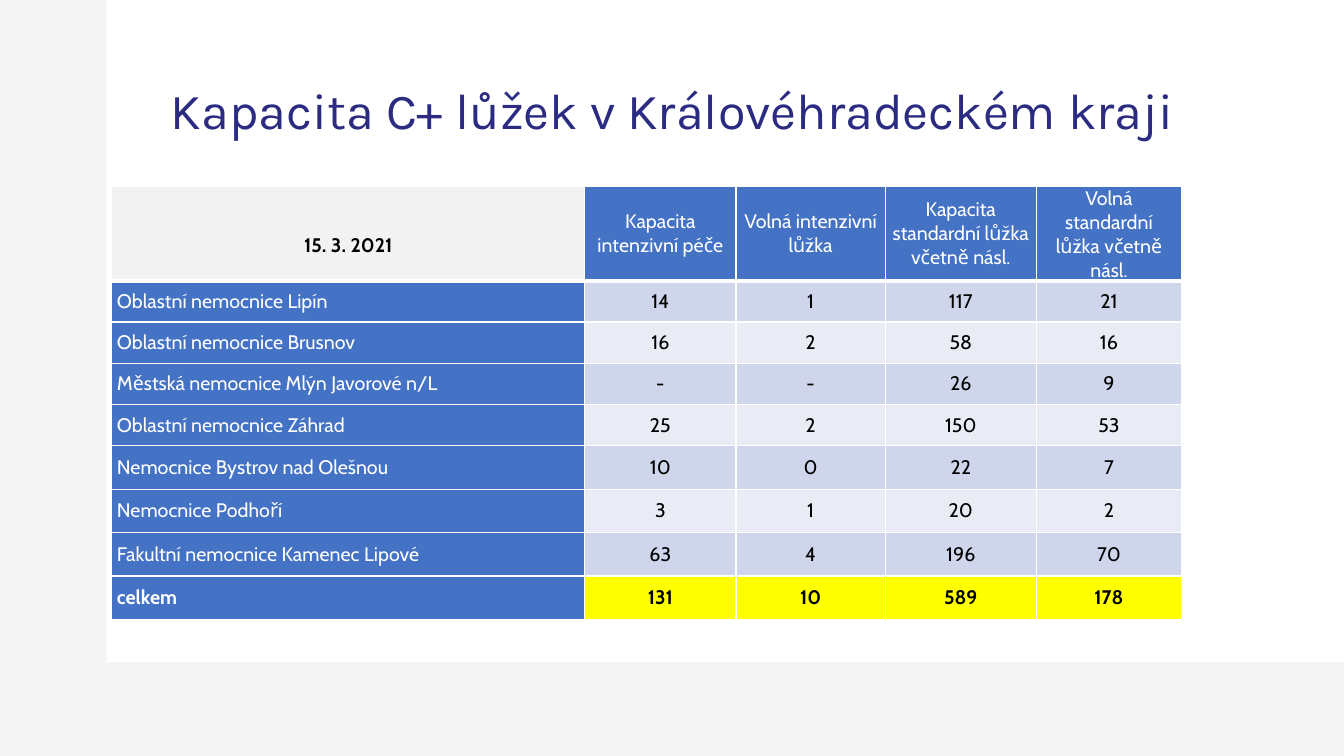
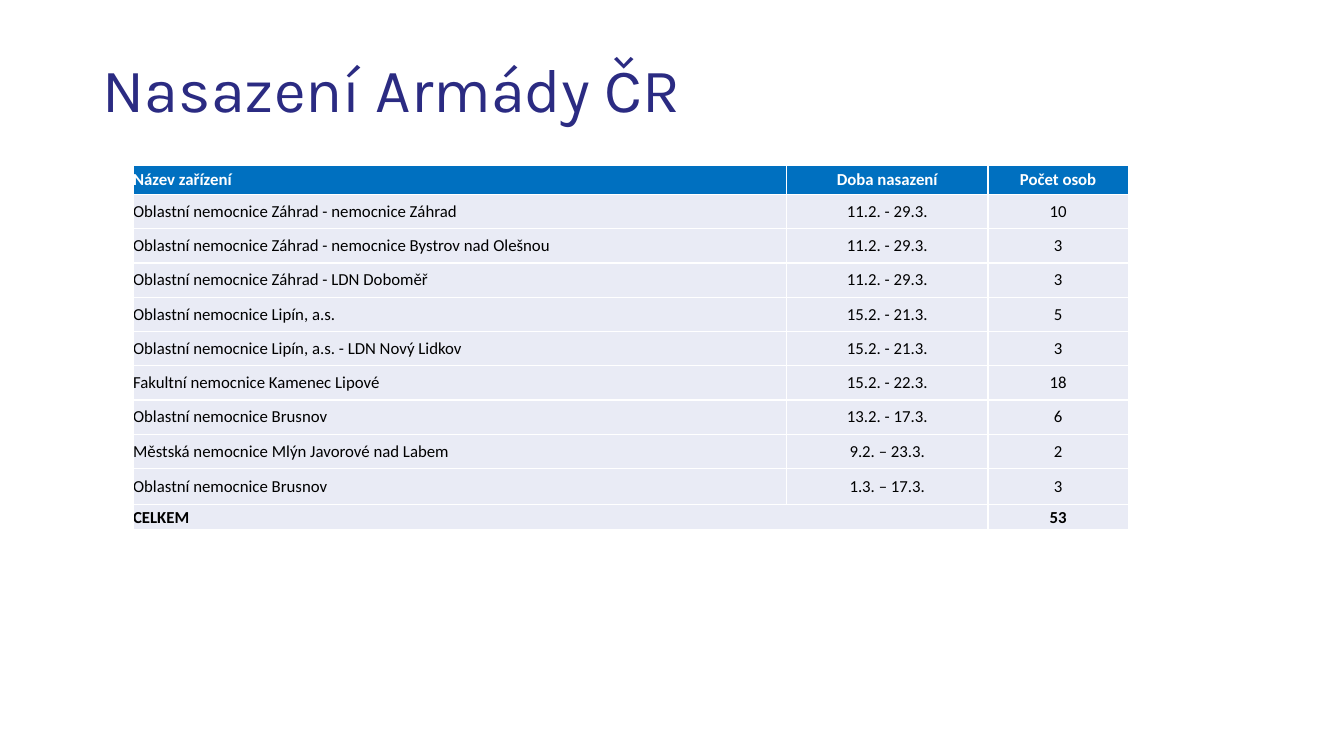
from dataclasses import dataclass

from lxml import etree
from pptx import Presentation
from pptx.dml.color import RGBColor
from pptx.enum import shapes, text
from pptx.oxml import ns
from pptx.util import Inches, Pt


@dataclass(frozen=True)
class Theme:
    title_font: str = "Karla"
    capacity_font: str = "Cabin"
    army_font: str = "Calibri"
    wide_title_size: int = 36
    title_size: int = 44
    capacity_size: int = 14
    army_size: int = 12
    title: str = "2B2B82"
    white: str = "FFFFFF"
    black: str = "000000"
    frame: str = "F4F4F4"
    date: str = "F2F2F2"
    blue: str = "4472C4"
    army_blue: str = "0070C0"
    dark_band: str = "CFD5EA"
    light_band: str = "E9EBF5"
    total: str = "FFFF00"


theme = Theme()


def add_title(slide, words, height, size, alignment):
    box = slide.shapes.add_textbox(Inches(0.92), Inches(0.4), Inches(11.5), Inches(height))
    frame = box.text_frame
    frame.word_wrap = True
    frame.vertical_anchor = text.MSO_ANCHOR.MIDDLE
    paragraph = frame.paragraphs[0]
    paragraph.text = words
    paragraph.alignment = alignment
    paragraph.line_spacing = 0.9
    paragraph.font.name = theme.title_font
    paragraph.font.size = Pt(size)
    paragraph.font.color.rgb = RGBColor.from_string(theme.title)


def add_grid(slide, position, widths, heights, rows, look, font, size, inset, header_rule):
    """Add a white-ruled table; look(row, column) gives fill, text colour and bold.

    None in a row extends the cell to its left. header_rule is in points.
    """
    left, top = position
    table = slide.shapes.add_table(
        len(rows), len(widths), Inches(left), Inches(top),
        Inches(sum(widths)), Inches(sum(heights))).table
    table.first_row = table.horz_banding = False
    for column, width in zip(table.columns, widths):
        column.width = Inches(width)
    for row, height in zip(table.rows, heights):
        row.height = Inches(height)

    for r, row in enumerate(rows):
        for c, words in enumerate(row):
            cell = table.cell(r, c)
            fill, color, bold = look(r, c)
            rules = {"L": 1, "R": 1, "T": header_rule if r == 1 else 1,
                     "B": header_rule if r == 0 else 1}
            properties = cell._tc.get_or_add_tcPr()
            for side, points in rules.items():
                line = etree.SubElement(properties, ns.qn(f"a:ln{side}"), w=str(Pt(points)))
                solid = etree.SubElement(line, ns.qn("a:solidFill"))
                etree.SubElement(solid, ns.qn("a:srgbClr"), val=theme.white)
            cell.fill.solid()
            cell.fill.fore_color.rgb = RGBColor.from_string(fill)
            if words is None:
                table.cell(r, c - 1).merge(cell)
                continue
            cell.vertical_anchor = text.MSO_ANCHOR.MIDDLE
            cell.margin_left = cell.margin_right = Inches(inset)
            cell.margin_top = cell.margin_bottom = 0
            paragraph = cell.text_frame.paragraphs[0]
            paragraph.text = words
            paragraph.alignment = text.PP_ALIGN.CENTER if c else text.PP_ALIGN.LEFT
            paragraph.font.name = font
            paragraph.font.size = Pt(size)
            paragraph.font.bold = bold
            paragraph.font.color.rgb = RGBColor.from_string(color)
    return table


presentation = Presentation()
presentation.slide_width = Inches(13.33)
presentation.slide_height = Inches(7.5)
blank = presentation.slide_layouts[6]

# Bed capacity
slide = presentation.slides.add_slide(blank)
slide.background.fill.solid()
slide.background.fill.fore_color.rgb = RGBColor.from_string(theme.frame)
panel = slide.shapes.add_shape(
    shapes.MSO_SHAPE.RECTANGLE, Inches(1.06), 0, Inches(12.27), Inches(6.57))
panel.shadow.inherit = False
panel.fill.solid()
panel.fill.fore_color.rgb = RGBColor.from_string(theme.white)
panel.line.fill.background()
add_title(slide, "Kapacita C+ lůžek v Královéhradeckém kraji", 1.45,
          theme.wide_title_size, text.PP_ALIGN.CENTER)

capacity_rows = [
    ("15. 3. 2021", "Kapacita intenzivní péče", "Volná intenzivní lůžka",
     "Kapacita standardní lůžka včetně násl.", "Volná standardní lůžka včetně násl."),
    ("Oblastní nemocnice Lipín", "14", "1", "117", "21"),
    ("Oblastní nemocnice Brusnov", "16", "2", "58", "16"),
    ("Městská nemocnice Mlýn Javorové n/L", "-", "-", "26", "9"),
    ("Oblastní nemocnice Záhrad", "25", "2", "150", "53"),
    ("Nemocnice Bystrov nad Olešnou", "10", "0", "22", "7"),
    ("Nemocnice Podhoří", "3", "1", "20", "2"),
    ("Fakultní nemocnice Kamenec Lipové", "63", "4", "196", "70"),
    ("celkem", "131", "10", "589", "178"),
]
capacity_total = len(capacity_rows) - 1


def capacity_look(row, column):
    if row == column == 0:
        return theme.date, theme.black, True
    if row == 0 or column == 0:
        return theme.blue, theme.white, row == capacity_total
    if row == capacity_total:
        return theme.total, theme.black, True
    return theme.dark_band if row % 2 else theme.light_band, theme.black, False


capacity = add_grid(
    slide, (1.11, 1.85), [4.69, 1.5, 1.48, 1.5, 1.44], [0.92] + [0.41] * 4 + [0.43] * 4,
    capacity_rows, capacity_look, theme.capacity_font, theme.capacity_size,
    inset=0.05, header_rule=3)
date_cell = capacity.cell(0, 0)
date_cell.margin_top = Inches(0.24)
date_cell.text_frame.paragraphs[0].alignment = text.PP_ALIGN.CENTER

# Army deployment
slide = presentation.slides.add_slide(blank)
add_title(slide, "Nasazení Armády ČR", 1.04, theme.title_size, text.PP_ALIGN.LEFT)

army_rows = [
    ("Název zařízení", "Doba nasazení", "Počet osob"),
    ("Oblastní nemocnice Záhrad - nemocnice Záhrad", "11.2. - 29.3.", "10"),
    ("Oblastní nemocnice Záhrad - nemocnice Bystrov nad Olešnou", "11.2. - 29.3.", "3"),
    ("Oblastní nemocnice Záhrad - LDN Doboměř", "11.2. - 29.3.", "3"),
    ("Oblastní nemocnice Lipín, a.s.", "15.2. - 21.3.", "5"),
    ("Oblastní nemocnice Lipín, a.s. - LDN Nový Lidkov", "15.2. - 21.3.", "3"),
    ("Fakultní nemocnice Kamenec Lipové", "15.2. - 22.3.", "18"),
    ("Oblastní nemocnice Brusnov", "13.2. - 17.3.", "6"),
    ("Městská nemocnice Mlýn Javorové nad Labem", "9.2. – 23.3.", "2"),
    ("Oblastní nemocnice Brusnov", "1.3. – 17.3.", "3"),
    ("CELKEM", None, "53"),
]


def army_look(row, column):
    if row == 0:
        return theme.army_blue, theme.white, True
    return theme.light_band, theme.black, row == len(army_rows) - 1


add_grid(slide, (1.32, 1.64), [6.48, 2, 1.39], [0.29] + [0.34] * 8 + [0.36, 0.25],
         army_rows, army_look, theme.army_font, theme.army_size, inset=0, header_rule=1)

presentation.save("out.pptx")
